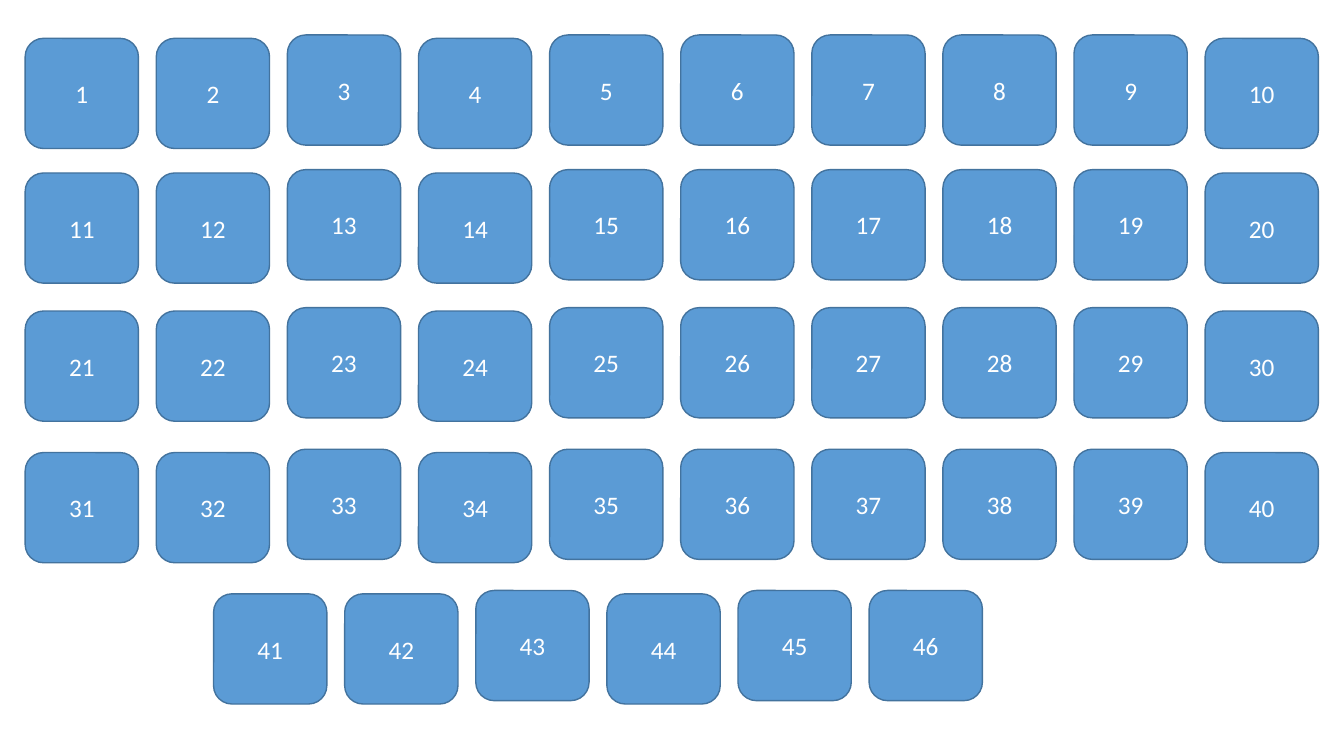
from pptx import Presentation
from pptx.dml.color import RGBColor
from pptx.enum.shapes import MSO_SHAPE
from pptx.enum.text import MSO_ANCHOR, PP_ALIGN
from pptx.util import Pt

ROUNDED = MSO_SHAPE.ROUNDED_RECTANGLE
MIDDLE = MSO_ANCHOR.MIDDLE
CENTER = PP_ALIGN.CENTER

COLORS = {"tile": "5B9BD5", "outline": "43739E", "number": "FFFFFF"}

# First number, last number, left edge, top edge
ROWS = [
    (1, 10, 18, 25),
    (11, 20, 18, 121.2),
    (21, 30, 18, 219.8),
    (31, 40, 18, 320.9),
    (41, 46, 152.6, 421.8),
]
LOWERED_COLUMNS = {0, 1, 3, 9}
DROP = 2.4
TILE_WIDTH, TILE_HEIGHT = 80.9, 78.7
COLUMN_STEP = 93.65


def color(name):
    return RGBColor.from_string(COLORS[name])


def add_tile(slide, number, left, top):
    tile = slide.shapes.add_shape(
        ROUNDED, Pt(left), Pt(top), Pt(TILE_WIDTH), Pt(TILE_HEIGHT))
    tile.shadow.inherit = False
    tile.fill.solid()
    tile.fill.fore_color.rgb = color("tile")
    tile.line.color.rgb = color("outline")
    tile.line.width = Pt(1)
    tile.text_frame.vertical_anchor = MIDDLE
    para = tile.text_frame.paragraphs[0]
    para.text = str(number)
    para.alignment = CENTER
    para.font.name = "Calibri"
    para.font.size = Pt(18)
    para.font.color.rgb = color("number")


def main():
    deck = Presentation()
    deck.slide_width, deck.slide_height = Pt(960), Pt(540)
    blank_layout = deck.slide_layouts[6]
    slide = deck.slides.add_slide(blank_layout)
    for first, last, row_left, row_top in ROWS:
        for column, number in enumerate(range(first, last + 1)):
            left = row_left + column * COLUMN_STEP
            top = row_top + (DROP if column in LOWERED_COLUMNS else 0)
            add_tile(slide, number, left, top)
    deck.save("out.pptx")


if __name__ == "__main__":
    main()
